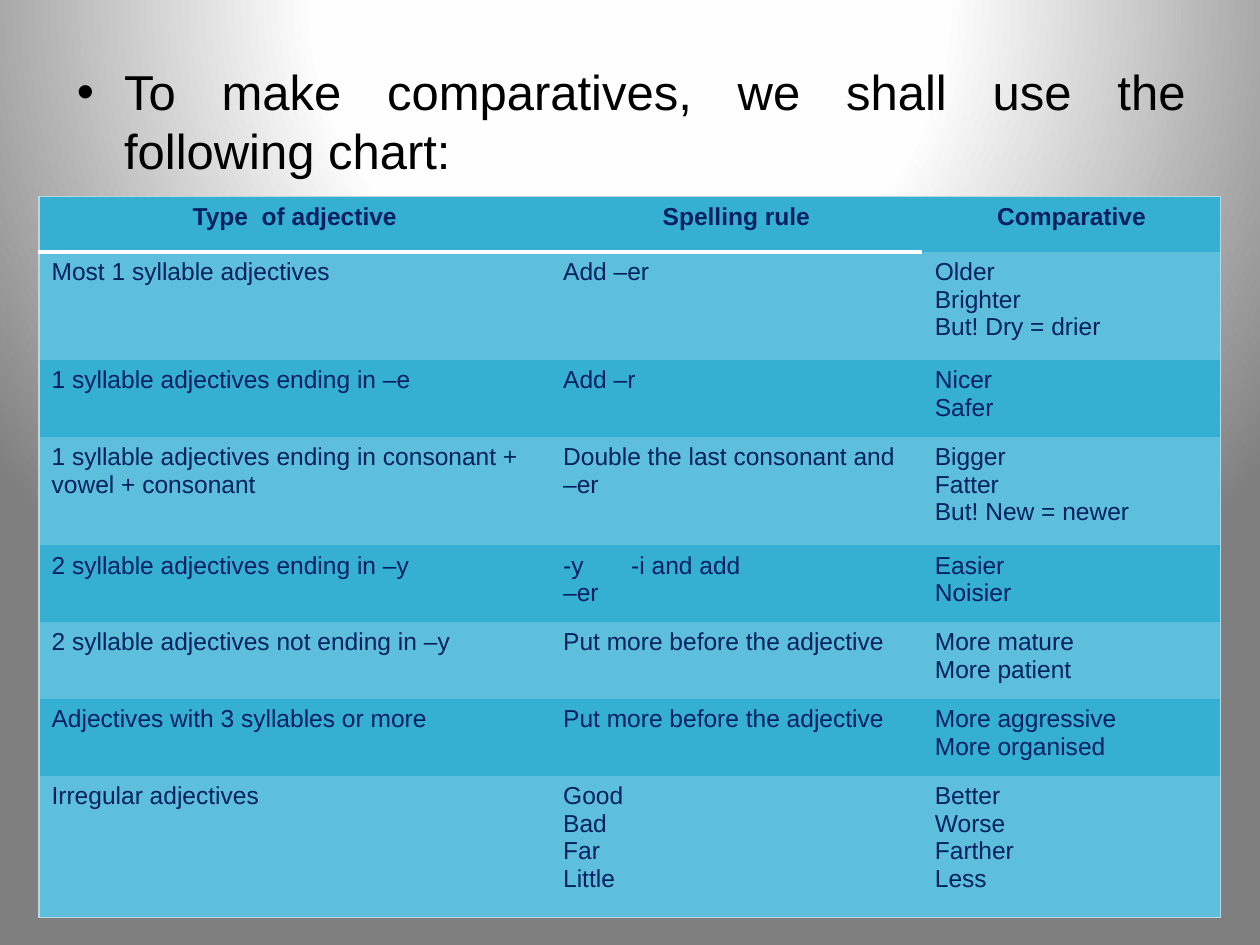
from lxml import etree
from pptx import Presentation
from pptx.dml.color import RGBColor
from pptx.enum.text import PP_ALIGN
from pptx.oxml import parse_xml
from pptx.oxml.ns import nsdecls, qn
from pptx.util import Inches, Pt

COLORS = {
    "black": "000000",
    "navy": "002060",
    "band_dark": "35AFD2",
    "band_light": "5DBFDB",
    "edge": "BCD7E1",
    "white": "FFFFFF",
}
FONT = "Arial"
NO_GRID_STYLE = "{2D5ABB26-0587-4C30-8999-92F81FD0307C}"
GRADIENT_STOPS = [(0, "FFFFFF"), (40, "FEFEFE"), (100, "7F7F7F")]

COLUMN_WIDTHS = [4.06, 2.95, 2.37]
ROW_HEIGHTS = [0.44, 0.86, 0.61, 0.86, 0.61, 0.61, 0.61, 1.12]
# Each line of a cell is one paragraph
ROWS = [
    ["Type  of adjective", "Spelling rule", "Comparative"],
    ["Most 1 syllable adjectives", "Add –er", "Older\nBrighter\nBut! Dry = drier"],
    ["1 syllable adjectives ending in –e", "Add –r", "Nicer\nSafer"],
    ["1 syllable adjectives ending in consonant + vowel + consonant",
     "Double the last consonant and –er", "Bigger\nFatter\nBut! New = newer"],
    ["2 syllable adjectives ending in –y", "-y\t-i and add\n–er", "Easier\nNoisier"],
    ["2 syllable adjectives not ending in –y", "Put more before the adjective",
     "More mature\nMore patient"],
    ["Adjectives with 3 syllables or more", "Put more before the adjective",
     "More aggressive\nMore organised"],
    ["Irregular adjectives", "Good\nBad\nFar\nLittle", "Better\nWorse\nFarther\nLess"],
]


def add_run(paragraph, text, size, color, bold=False):
    run = paragraph.add_run()
    run.text = text
    run.font.name = FONT
    run.font.size = Pt(size)
    run.font.bold = bold
    run.font.color.rgb = RGBColor.from_string(COLORS[color])


def set_background(slide):
    fill = slide.background.fill
    fill.gradient()
    gradient = slide.background._cSld.find(".//" + qn("a:gradFill"))
    stops = "".join(
        f'<a:gs pos="{position * 1000}"><a:srgbClr val="{color}"/></a:gs>'
        for position, color in GRADIENT_STOPS)
    gradient.getparent().replace(gradient, parse_xml(
        f'<a:gradFill {nsdecls("a")} rotWithShape="1"><a:gsLst>{stops}</a:gsLst>'
        '<a:path path="circle"><a:fillToRect l="50000" t="-80000" r="50000" b="180000"/>'
        '</a:path></a:gradFill>'))


def add_intro(slide, left, top, width, height):
    body = slide.placeholders[1]
    body.left, body.top = Inches(left), Inches(top)
    body.width, body.height = Inches(width), Inches(height)
    paragraph = body.text_frame.paragraphs[0]
    paragraph.alignment = PP_ALIGN.JUSTIFY
    add_run(paragraph, "To make comparatives, we shall use the following chart:", 28, "black")


def add_border(cell, side, color, width):
    cell._tc.get_or_add_tcPr().append(parse_xml(
        f'<a:ln{side} {nsdecls("a")} w="{Pt(width)}"><a:solidFill>'
        f'<a:srgbClr val="{COLORS[color]}"/></a:solidFill></a:ln{side}>'))


def add_borders(cell, row, column):
    """Thin outer frame, with a thick rule under the first two headings."""
    last_row, last_column = len(ROWS) - 1, len(COLUMN_WIDTHS) - 1
    for side, on_edge in (("L", column == 0), ("R", column == last_column),
                          ("T", row == 0), ("B", row == last_row)):
        if on_edge:
            add_border(cell, side, "edge", 0.75)
    if row == 0 and column < last_column:
        add_border(cell, "B", "white", 3)


def fill_cell(cell, text, row):
    cell.fill.solid()
    band = "band_light" if row % 2 else "band_dark"
    cell.fill.fore_color.rgb = RGBColor.from_string(COLORS[band])
    for index, line in enumerate(text.split("\n")):
        frame = cell.text_frame
        paragraph = frame.add_paragraph() if index else frame.paragraphs[0]
        paragraph.alignment = PP_ALIGN.LEFT if row else PP_ALIGN.CENTER
        if "\t" in line:
            tabs = etree.SubElement(paragraph._p.get_or_add_pPr(), qn("a:tabLst"))
            etree.SubElement(tabs, qn("a:tab"), pos=str(Inches(0.54)), algn="l")
        add_run(paragraph, line, 14, "navy", bold=row == 0)


def add_rules_table(slide, left, top, width, height):
    frame = slide.shapes.add_table(len(ROWS), len(COLUMN_WIDTHS), Inches(left),
                                   Inches(top), Inches(width), Inches(height))
    table = frame.table
    table.horz_banding = False
    table._tbl.tblPr.find(qn("a:tableStyleId")).text = NO_GRID_STYLE
    for column, column_width in zip(table.columns, COLUMN_WIDTHS):
        column.width = Inches(column_width)
    for row, row_height in zip(table.rows, ROW_HEIGHTS):
        row.height = Inches(row_height)
    for row, texts in enumerate(ROWS):
        for column, text in enumerate(texts):
            cell = table.cell(row, column)
            add_borders(cell, row, column)
            fill_cell(cell, text, row)


def main():
    presentation = Presentation()
    presentation.slide_width, presentation.slide_height = Inches(10), Inches(7.5)
    slide = presentation.slides.add_slide(presentation.slide_layouts[1])
    title = slide.shapes.title
    title._element.getparent().remove(title._element)
    set_background(slide)
    add_intro(slide, 0.51, 0.44, 9, 1.29)
    add_rules_table(slide, 0.31, 1.56, sum(COLUMN_WIDTHS), sum(ROW_HEIGHTS))
    presentation.save("out.pptx")


if __name__ == "__main__":
    main()
